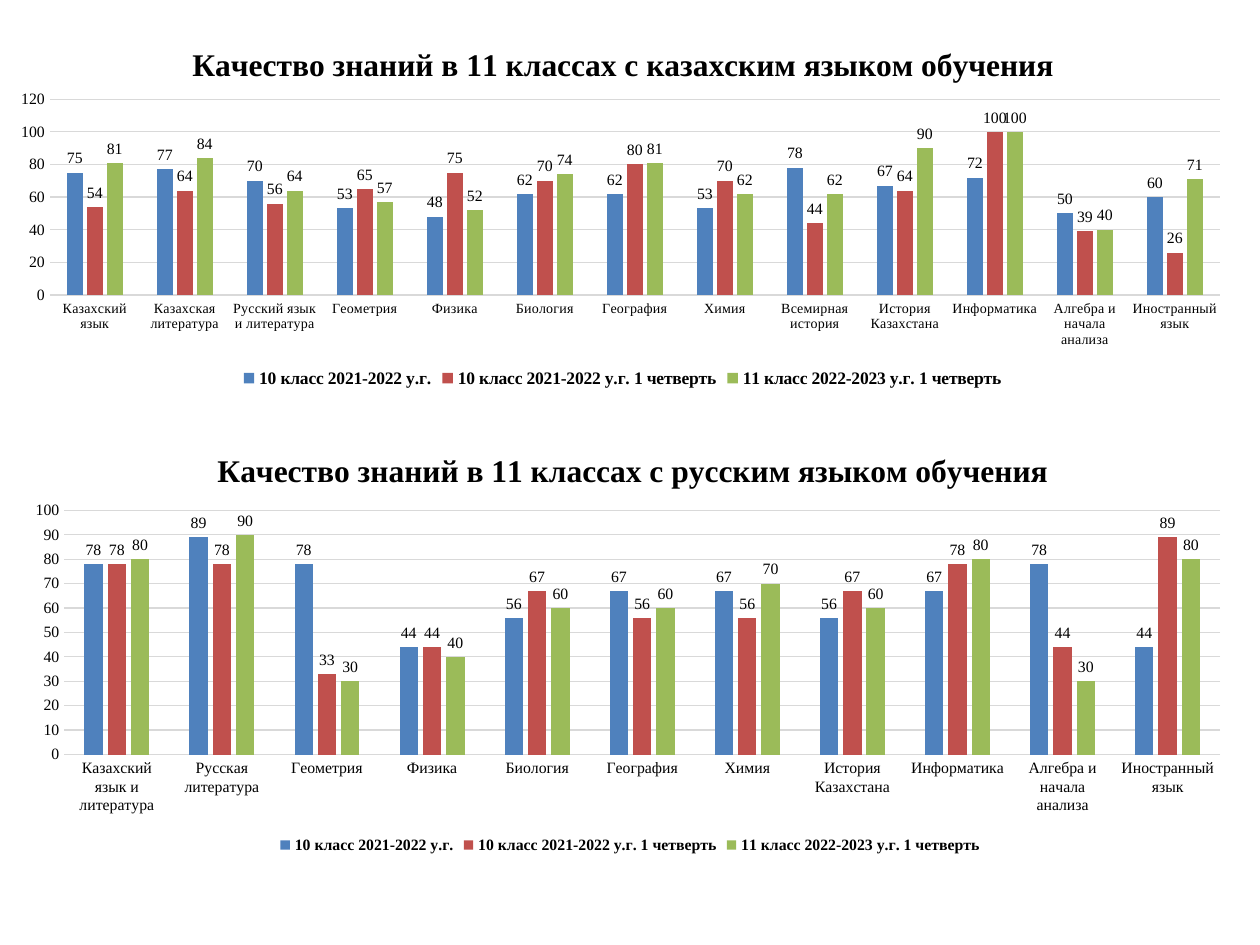
import pptx
import pptx.util
import pptx.chart.data
import pptx.dml.color
import pptx.enum.chart
import pptx.oxml
import pptx.oxml.ns

FONT = "Times New Roman"
SERIES = {
    "10 класс 2021-2022 у.г.": "4F81BD",
    "10 класс 2021-2022 у.г. 1 четверть": "C0504D",
    "11 класс 2022-2023 у.г. 1 четверть": "9BBB59",
}
KAZAKH = {
    "Казахский язык": (75, 54, 81),
    "Казахская литература": (77, 64, 84),
    "Русский язык и литература": (70, 56, 64),
    "Геометрия": (53, 65, 57),
    "Физика": (48, 75, 52),
    "Биология": (62, 70, 74),
    "География": (62, 80, 81),
    "Химия": (53, 70, 62),
    "Всемирная история": (78, 44, 62),
    "История Казахстана": (67, 64, 90),
    "Информатика": (72, 100, 100),
    "Алгебра и начала анализа": (50, 39, 40),
    "Иностранный язык": (60, 26, 71),
}
RUSSIAN = {
    "Казахский язык и литература": (78, 78, 80),
    "Русская литература": (89, 78, 90),
    "Геометрия": (78, 33, 30),
    "Физика": (44, 44, 40),
    "Биология": (56, 67, 60),
    "География": (67, 56, 60),
    "Химия": (67, 56, 70),
    "История Казахстана": (56, 67, 60),
    "Информатика": (67, 78, 80),
    "Алгебра и начала анализа": (78, 44, 30),
    "Иностранный язык": (44, 89, 80),
}


def color(hex_string):
    return pptx.dml.color.RGBColor.from_string(hex_string)


def set_attrs(obj, values):
    for name, value in values.items():
        setattr(obj, name, value)


def set_font(font, size, bold=False):
    set_attrs(font, {"name": FONT, "size": pptx.util.Pt(size), "bold": bold})
    font.color.rgb = color("000000")


def set_line(line, hex_string):
    line.color.rgb = color(hex_string)
    line.width = pptx.util.Pt(0.75)


def set_layout(parent, index, shares, inner=False):
    for old in parent.findall(pptx.oxml.ns.qn("c:layout")):
        parent.remove(old)
    target = '<c:layoutTarget val="inner"/>' if inner else ""
    modes = "".join(f'<c:{key}Mode val="edge"/>' for key in "xy")
    sizes = "".join(f'<c:{key} val="{share}"/>' for key, share in zip("xywh", shares))
    parent.insert(index, pptx.oxml.parse_xml(
        f'<c:layout {pptx.oxml.ns.nsdecls("c")}><c:manualLayout>'
        f"{target}{modes}{sizes}</c:manualLayout></c:layout>"))


def add_title(chart, text, shares):
    tf = chart.chart_title.text_frame
    r = tf.paragraphs[0].add_run()
    r.text = text
    set_font(r.font, 18, True)
    chart.chart_title.include_in_layout = False
    set_layout(chart.chart_title._element, 1, shares)


def format_axes(chart, category_size, top, step):
    none = pptx.enum.chart.XL_TICK_MARK.NONE
    for axis, size in ((chart.category_axis, category_size), (chart.value_axis, 9)):
        set_attrs(axis, {"major_tick_mark": none, "minor_tick_mark": none})
        set_font(axis.tick_labels.font, size)
    set_line(chart.category_axis.format.line, "D9D9D9")
    axis = chart.value_axis
    set_attrs(axis, {"minimum_scale": 0, "maximum_scale": top, "major_unit": step})
    set_attrs(axis.tick_labels, {"number_format": "0", "number_format_is_linked": False})
    axis.format.line.fill.background()
    set_line(axis.major_gridlines.format.line, "D9D9D9")


def format_series(plot):
    set_attrs(plot, {"gap_width": 219, "overlap": -27, "vary_by_categories": False})
    for series in plot.series:
        series.format.fill.solid()
        series.format.fill.fore_color.rgb = color(SERIES[series.name])
        labels = series.data_labels
        set_attrs(labels, {
            "show_value": True,
            "number_format": "0",
            "number_format_is_linked": False,
            "position": pptx.enum.chart.XL_LABEL_POSITION.OUTSIDE_END,
        })
        set_font(labels.font, 9)


def add_legend(chart, size):
    chart.has_legend = True
    set_attrs(chart.legend, {
        "position": pptx.enum.chart.XL_LEGEND_POSITION.BOTTOM,
        "include_in_layout": False,
    })
    set_font(chart.legend.font, size, True)


def add_quality_chart(s, box, title, grades, title_at, plot_at,
                      category_size, legend_size, top, step):
    data = pptx.chart.data.CategoryChartData(number_format="0")
    data.categories = list(grades)
    for name, values in zip(SERIES, zip(*grades.values())):
        data.add_series(name, values)
    chart = s.shapes.add_chart(
        pptx.enum.chart.XL_CHART_TYPE.COLUMN_CLUSTERED,
        *map(pptx.util.Inches, box), data).chart
    set_font(chart.font, 10)
    add_title(chart, title, title_at)
    format_axes(chart, category_size, top, step)
    format_series(chart.plots[0])
    add_legend(chart, legend_size)
    plot_area = chart._chartSpace.find(".//" + pptx.oxml.ns.qn("c:plotArea"))
    set_layout(plot_area, 0, plot_at, inner=True)


def main():
    prs = pptx.Presentation()
    set_attrs(prs, {"slide_width": pptx.util.Inches(10),
                    "slide_height": pptx.util.Inches(7.5)})
    s = prs.slides.add_slide(prs.slide_layouts[6])
    add_quality_chart(
        s, (0, 0.13, 9.88, 2.99),
        "Качество знаний в 11 классах с казахским языком обучения", KAZAKH,
        title_at=(0.15, 0.06), plot_at=(0.04, 0.22, 0.94, 0.52),
        category_size=8, legend_size=10, top=120, step=20)
    add_quality_chart(
        s, (0.12, 3.36, 9.76, 3.46),
        "Качество знаний в 11 классах с русским языком обучения", RUSSIAN,
        title_at=(0.16, 0.05), plot_at=(0.04, 0.2, 0.94, 0.56),
        category_size=9, legend_size=9, top=100, step=10)
    prs.save("out.pptx")


if __name__ == "__main__":
    main()
